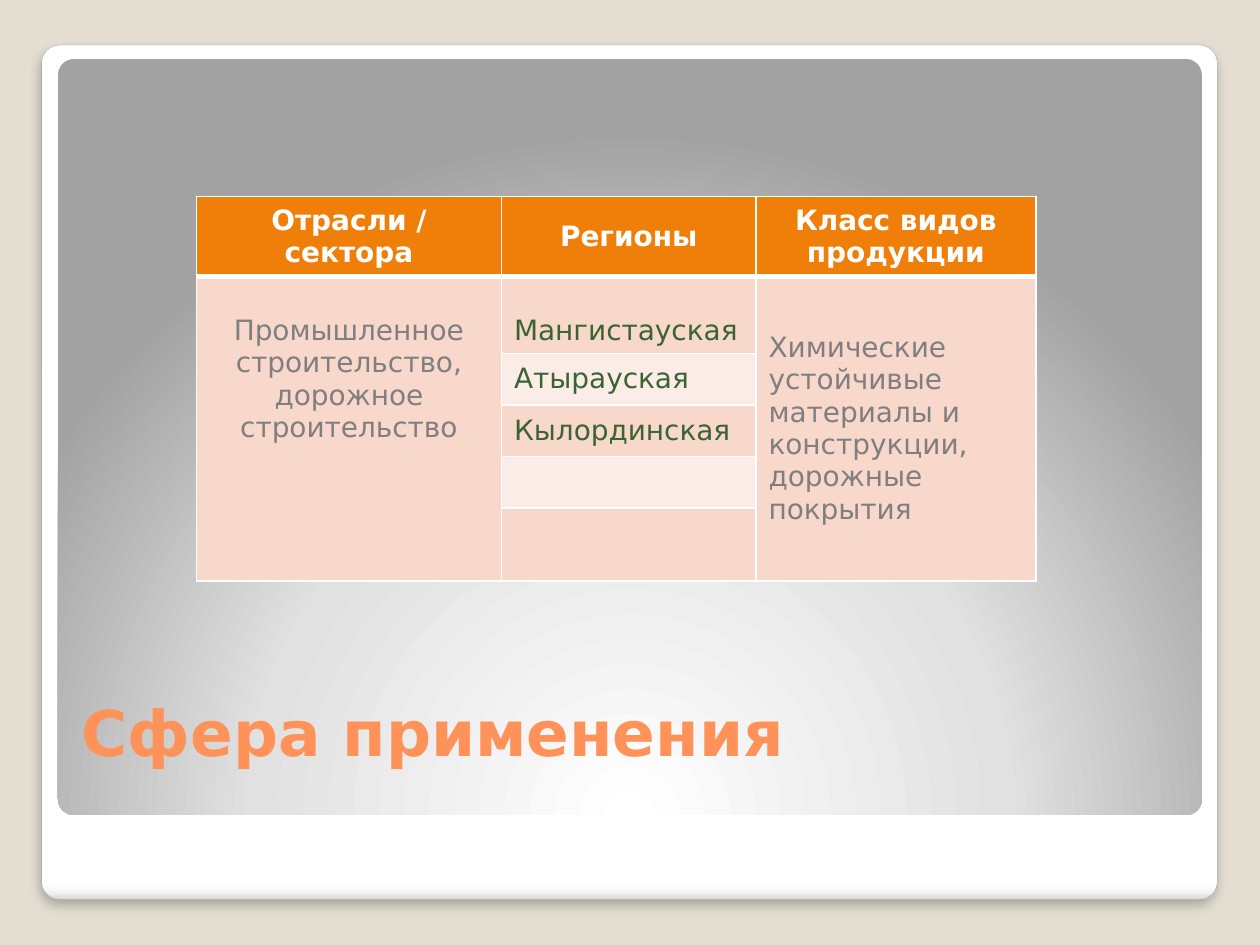
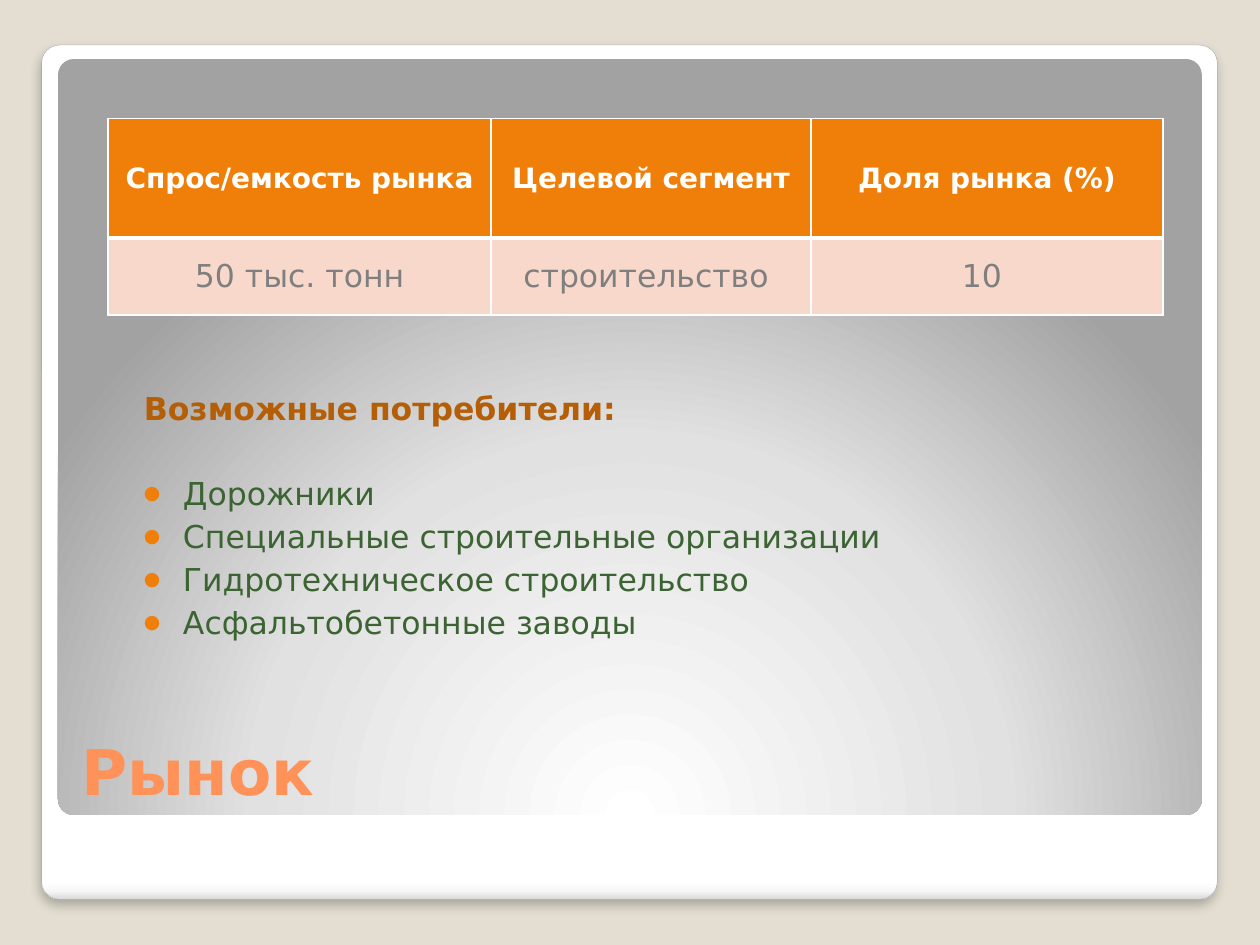
from dataclasses import dataclass
from typing import NamedTuple, Optional

import lxml.etree
import pptx
import pptx.dml.color
import pptx.enum.shapes
import pptx.enum.text
import pptx.oxml
import pptx.oxml.ns
import pptx.util
from pptx.util import Cm, Pt

Align = pptx.enum.text.PP_ALIGN
Anchor = pptx.enum.text.MSO_ANCHOR
NAMESPACE = pptx.oxml.ns.nsdecls("a")


# Theme shared by both slides
@dataclass(frozen=True)
class Theme:
    font: str = "DejaVu Sans"
    background: str = "E3DED1"
    frame_line: str = "A4A4A4"
    title: str = "FF9258"
    heading: str = "B45F07"
    accent: str = "F07F09"
    band_dark: str = "F9D8CC"
    band_light: str = "FCECE7"
    white: str = "FFFFFF"
    gray: str = "7F7F7F"
    green: str = "3B6432"
    title_size: float = 36
    body_size: float = 18
    table_size: float = 16


THEME = Theme()


class Box(NamedTuple):
    left: float
    top: float
    width: float
    height: float

    def lengths(self) -> list:
        return [Cm(value) for value in self]


class Style(NamedTuple):
    size: float
    color: str
    bold: bool = False


class Panel(NamedTuple):
    box: Box
    stops: tuple
    direction: str
    line: Optional[str] = None
    shadow: bool = False


class CellItem(NamedTuple):
    row: int
    column: int
    text: str
    style: Style
    fill: str
    align: Align = Align.CENTER
    anchor: Anchor = Anchor.MIDDLE
    rows_spanned: int = 1
    top_margin: float = 0.13


class TableLayout(NamedTuple):
    left: float
    top: float
    columns: tuple
    rows: tuple


TITLE = Style(THEME.title_size, THEME.title, True)
HEADING = Style(THEME.body_size, THEME.heading, True)
LIST_ITEM = Style(THEME.body_size, THEME.green)
HEADER = Style(THEME.table_size, THEME.white, True)
CELL = Style(THEME.table_size, THEME.gray)
REGION = Style(THEME.table_size, THEME.green)
MARKET = Style(THEME.body_size, THEME.gray)

PANELS = (
    Panel(
        Box(0.84, 0.91, 23.7, 17.22),
        ((0, "FFFFFF"), (98, "FFFFFF"), (99, "F7F7F7"), (100, "DADADA")),
        '<a:lin ang="5400000" scaled="0"/>',
        line=THEME.frame_line,
        shadow=True,
    ),
    Panel(
        Box(1.17, 1.19, 23.06, 15.24),
        ((0, "FFFFFF"), (55, "E1E1E1"), (100, "A2A2A2")),
        '<a:path path="circle"><a:fillToRect l="50000" t="175000" '
        'r="50000" b="-75000"/></a:path>',
    ),
)


def rgb(color: str) -> pptx.dml.color.RGBColor:
    return pptx.dml.color.RGBColor.from_string(color)


def add_run(paragraph, text: str, style: Style) -> None:
    run = paragraph.add_run()
    run.text = text
    run.font.name = THEME.font
    run.font.size = Pt(style.size)
    run.font.bold = style.bold
    run.font.color.rgb = rgb(style.color)


# Frame, panel and title
def add_panel(slide, panel: Panel) -> None:
    shape = slide.shapes.add_shape(
        pptx.enum.shapes.MSO_SHAPE.ROUNDED_RECTANGLE, *panel.box.lengths()
    )
    shape.adjustments[0] = 0.021
    shape.shadow.inherit = False
    if panel.line:
        shape.line.color.rgb = rgb(panel.line)
        shape.line.width = Pt(0.16)
    else:
        shape.line.fill.background()
    stops = "".join(
        f'<a:gs pos="{position * 1000}"><a:srgbClr val="{color}"/></a:gs>'
        for position, color in panel.stops
    )
    properties = shape._element.spPr
    geometry = properties.find(pptx.oxml.ns.qn("a:prstGeom"))
    geometry.addnext(pptx.oxml.parse_xml(
        f'<a:gradFill {NAMESPACE} rotWithShape="1"><a:gsLst>{stops}</a:gsLst>'
        f"{panel.direction}</a:gradFill>"
    ))
    if panel.shadow:
        effects = properties.find(pptx.oxml.ns.qn("a:effectLst"))
        effects.append(pptx.oxml.parse_xml(
            f'<a:outerShdw {NAMESPACE} blurRad="{Pt(6)}" dist="{Pt(4)}" '
            'dir="5400000" algn="t" rotWithShape="0"><a:srgbClr val="000000">'
            '<a:alpha val="25000"/></a:srgbClr></a:outerShdw>'
        ))


def add_text_box(slide, box: Box, anchor: Anchor = Anchor.TOP):
    frame = slide.shapes.add_textbox(*box.lengths()).text_frame
    frame.word_wrap = True
    frame.vertical_anchor = anchor
    return frame


def add_framed_slide(presentation, title: str, title_top: float):
    slide = presentation.slides.add_slide(presentation.slide_layouts[6])
    slide.background.fill.solid()
    slide.background.fill.fore_color.rgb = rgb(THEME.background)
    for panel in PANELS:
        add_panel(slide, panel)
    frame = add_text_box(slide, Box(1.4, title_top, 22.73, 2.92), Anchor.BOTTOM)
    add_run(frame.paragraphs[0], title, TITLE)
    return slide


# Tables
def set_borders(cell, row: int) -> None:
    widths = {"L": 1, "R": 1, "T": 3 if row == 1 else 1, "B": 3 if row == 0 else 1}
    properties = cell._tc.get_or_add_tcPr()
    for index, (side, width) in enumerate(widths.items()):
        properties.insert(index, pptx.oxml.parse_xml(
            f'<a:ln{side} {NAMESPACE} w="{Pt(width)}"><a:solidFill>'
            f'<a:srgbClr val="{THEME.white}"/></a:solidFill></a:ln{side}>'
        ))


def add_table(slide, layout: TableLayout, items: list[CellItem]) -> None:
    box = Box(layout.left, layout.top, sum(layout.columns), sum(layout.rows))
    table = slide.shapes.add_table(
        len(layout.rows), len(layout.columns), *box.lengths()
    ).table
    for column, width in zip(table.columns, layout.columns):
        column.width = Cm(width)
    for row, height in zip(table.rows, layout.rows):
        row.height = Cm(height)
    for item in items:
        for row in range(item.row, item.row + item.rows_spanned):
            part = table.cell(row, item.column)
            part.fill.solid()
            part.fill.fore_color.rgb = rgb(item.fill)
            set_borders(part, row)
        cell = table.cell(item.row, item.column)
        if item.rows_spanned > 1:
            cell.merge(table.cell(item.row + item.rows_spanned - 1, item.column))
        cell.vertical_anchor = item.anchor
        cell.margin_top = Cm(item.top_margin)
        if item.text:
            paragraph = cell.text_frame.paragraphs[0]
            paragraph.alignment = item.align
            add_run(paragraph, item.text, item.style)


def header_items(*labels: str) -> list[CellItem]:
    return [
        CellItem(0, column, label, HEADER, THEME.accent)
        for column, label in enumerate(labels)
    ]


# Consumer list
def add_bullet(paragraph) -> None:
    properties = paragraph._p.get_or_add_pPr()
    properties.set("marL", str(Cm(0.79)))
    properties.set("indent", str(-Cm(0.79)))
    for tag, name, value in (
        ("buClr", None, None),
        ("buSzPct", "val", "60000"),
        ("buFont", "typeface", THEME.font),
        ("buChar", "char", "●"),
    ):
        element = lxml.etree.SubElement(properties, pptx.oxml.ns.qn(f"a:{tag}"))
        if name:
            element.set(name, value)
        else:
            color = lxml.etree.SubElement(element, pptx.oxml.ns.qn("a:srgbClr"))
            color.set("val", THEME.accent)


def add_consumers(slide, heading: str, consumers: tuple) -> None:
    frame = add_text_box(slide, Box(2.39, 7.54, 21.03, 6.35))
    frame.margin_left = Cm(0.51)
    frame.margin_top = Cm(0.3)
    add_run(frame.paragraphs[0], heading, HEADING)
    for index, consumer in enumerate(consumers):
        paragraph = frame.add_paragraph()
        paragraph.space_before = Pt(3 if index else 27)
        add_bullet(paragraph)
        add_run(paragraph, consumer, LIST_ITEM)


# Slides
def build_application_slide(presentation) -> None:
    slide = add_framed_slide(presentation, "Сфера применения", 12.7)
    items = header_items("Отрасли / сектора", "Регионы", "Класс видов продукции")
    items.append(CellItem(
        1, 0, "Промышленное строительство, дорожное строительство", CELL,
        THEME.band_dark, anchor=Anchor.TOP, rows_spanned=5, top_margin=0.77,
    ))
    regions = ("Мангистауская", "Атырауская", "Кылординская", "", "")
    for row, region in enumerate(regions, start=1):
        items.append(CellItem(
            row, 1, region, REGION,
            THEME.band_dark if row % 2 else THEME.band_light,
            Align.LEFT, Anchor.BOTTOM if row == 1 else Anchor.MIDDLE,
        ))
    items.append(CellItem(
        1, 2, "Химические устойчивые материалы и конструкции, дорожные покрытия",
        CELL, THEME.band_dark, Align.LEFT, rows_spanned=5,
    ))
    rows = (1.55, 1.55, 1.04, 1.04, 1.04, 1.47)
    add_table(slide, TableLayout(3.96, 3.96, (6.15, 5.13, 5.64), rows), items)


def build_market_slide(presentation) -> None:
    slide = add_framed_slide(presentation, "Рынок", 13.49)
    add_consumers(slide, "Возможные потребители:", (
        "Дорожники",
        "Специальные строительные организации",
        "Гидротехническое строительство",
        "Асфальтобетонные заводы",
    ))
    items = header_items("Спрос/емкость рынка", "Целевой сегмент", "Доля рынка (%)")
    for column, text in enumerate(("50 тыс. тонн", "строительство ", "10 ")):
        items.append(CellItem(1, column, text, MARKET, THEME.band_dark))
    add_table(slide, TableLayout(2.18, 2.39, (7.72, 6.45, 7.09), (2.41, 1.55)), items)


def main() -> None:
    presentation = pptx.Presentation()
    presentation.slide_width = Cm(25.4)
    presentation.slide_height = Cm(19.05)
    build_application_slide(presentation)
    build_market_slide(presentation)
    presentation.save("out.pptx")


if __name__ == "__main__":
    main()
